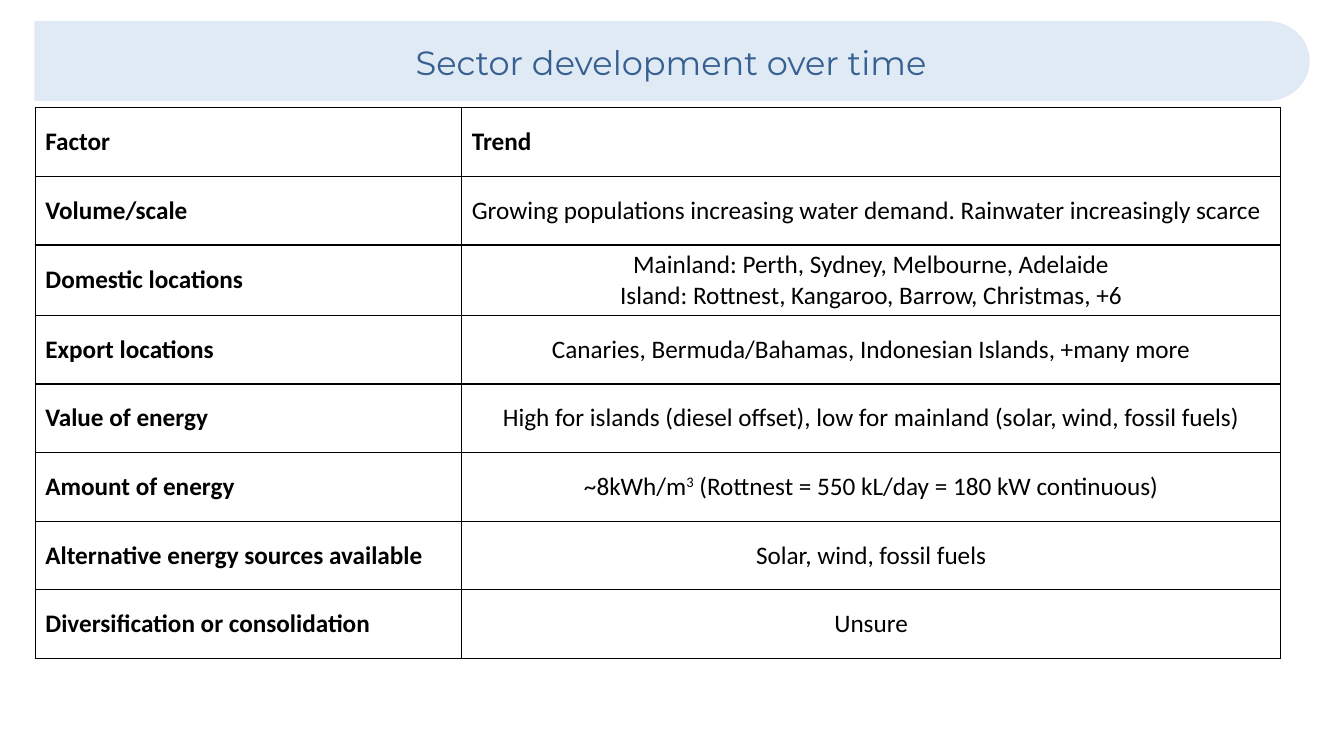
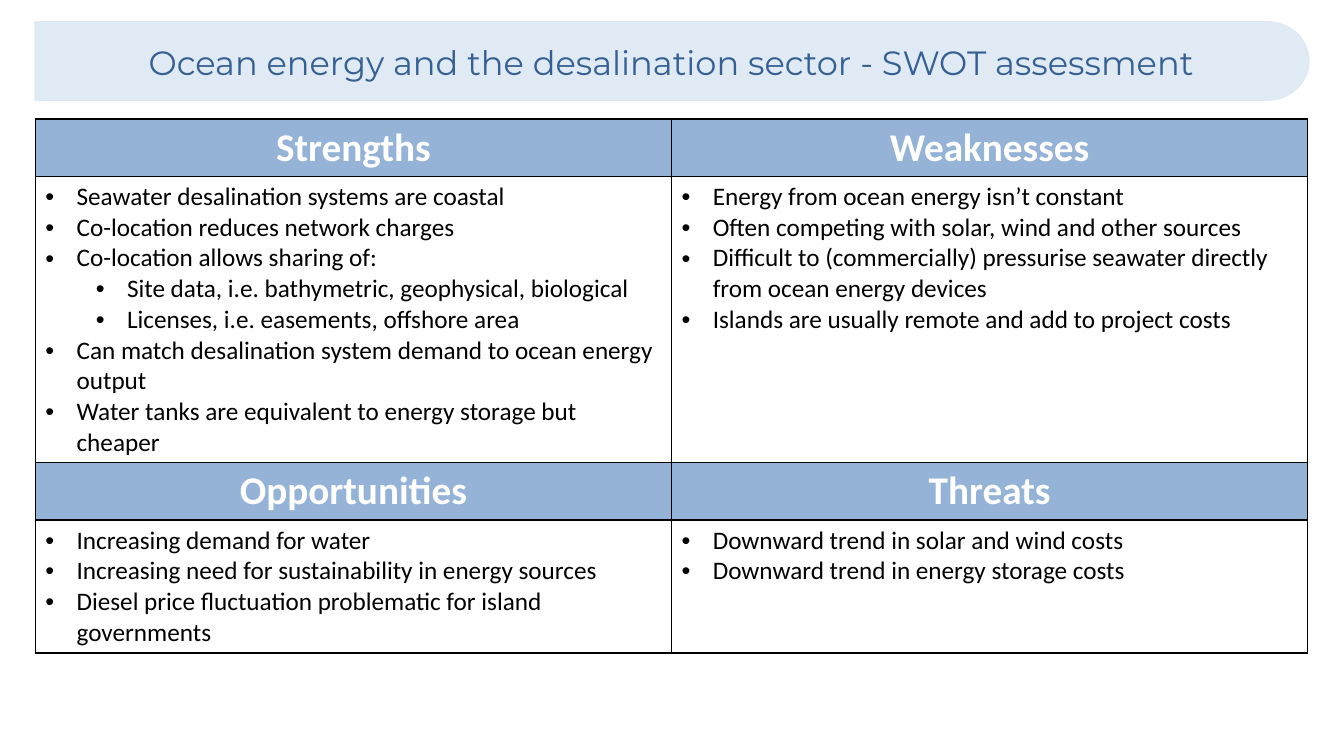
import math

import pptx
import pptx.dml.color
import pptx.enum.text
import pptx.oxml
import pptx.oxml.ns
import pptx.util
from pptx.util import Inches

HUE = {"band": "E0EAF4", "title": "376092", "head": "95B3D7",
       "ink": "000000", "page": "FFFFFF"}
ALIGN = pptx.enum.text.PP_ALIGN
ANCHOR = pptx.enum.text.MSO_ANCHOR
LEFT = 0.35


def color(name):
    return pptx.dml.color.RGBColor.from_string(HUE[name])


def write(para, text, size=18, font="Calibri", hue="ink", bold=False,
          align=ALIGN.LEFT, level=None):
    """Fill a paragraph; ^marks^ enclose superscript, a level gives a bullet."""
    if level is not None:
        props = para._p.get_or_add_pPr()
        props.set("marL", str(Inches(0.31 + 0.5 * level)))
        props.set("indent", str(Inches(-0.31)))
        mark = pptx.oxml.ns.nsdecls("a")
        for xml in (f'<a:buFont {mark} typeface="Arial"/>',
                    f'<a:buChar {mark} char="•"/>'):
            props.append(pptx.oxml.parse_xml(xml))
        para.level = level
    para.alignment = align
    for index, part in enumerate(text.split("^")):
        run = para.add_run()
        run.text = part
        run.font.size = pptx.util.Pt(size)
        run.font.name = font
        run.font.bold = bold
        run.font.color.rgb = color(hue)
        if index % 2:
            run._r.get_or_add_rPr().set("baseline", "30000")


class Deck:
    def __init__(self):
        self.file = pptx.Presentation()
        self.file.slide_width = Inches(13.33)
        self.file.slide_height = Inches(7.5)
        self.slide = None

    def page(self, title):
        """Start a slide with its band and title."""
        self.slide = self.file.slides.add_slide(self.file.slide_layouts[6])
        self.slide.background.fill.solid()
        self.slide.background.fill.fore_color.rgb = color("page")
        self.band()
        self.title(title)

    def band(self):
        left, top, high, hub, wide = 0.34, 0.21, 0.79, 12.57, 0.42
        mid = top + high / 2
        turns = [math.radians(step) for step in range(-90, 91, 5)]
        arc = [(hub + wide * math.cos(turn), mid + high / 2 * math.sin(turn))
               for turn in turns]
        pen = self.slide.shapes.build_freeform(
            Inches(left), Inches(top), scale=1.0)
        pen.add_line_segments(
            [(Inches(x), Inches(y)) for x, y in arc + [(left, top + high)]])
        shape = pen.convert_to_shape()
        shape.shadow.inherit = False
        shape.fill.solid()
        shape.fill.fore_color.rgb = color("band")
        shape.line.fill.background()

    def title(self, text):
        box = self.slide.shapes.add_textbox(
            Inches(LEFT), Inches(0.35), Inches(12.61), Inches(0.54))
        frame = box.text_frame
        frame.word_wrap = True
        frame.vertical_anchor = ANCHOR.MIDDLE
        write(frame.paragraphs[0], text, size=24, font="Montserrat",
              hue="title", align=ALIGN.CENTER)

    def table(self, top, cols, rows):
        """Add an empty table from its column widths and row heights."""
        grid = self.slide.shapes.add_table(
            len(rows), len(cols), Inches(LEFT), Inches(top),
            Inches(sum(cols)), Inches(sum(rows))).table
        grid.first_row = grid.horz_banding = False
        for col, width in zip(grid.columns, cols):
            col.width = Inches(width)
        for row, height in zip(grid.rows, rows):
            row.height = Inches(height)
        return grid

    def cell(self, cell, lines, fill=None, anchor=ANCHOR.TOP, **style):
        """Border, fill and write one cell; each line is (text, level)."""
        props = cell._tc.get_or_add_tcPr()
        for side in "LRTB":
            props.append(pptx.oxml.parse_xml(
                f'<a:ln{side} {pptx.oxml.ns.nsdecls("a")} w="12700">'
                f'<a:solidFill><a:srgbClr val="{HUE["ink"]}"/></a:solidFill>'
                f'</a:ln{side}>'))
        if fill:
            cell.fill.solid()
            cell.fill.fore_color.rgb = color(fill)
        else:
            cell.fill.background()
        cell.vertical_anchor = anchor
        frame = cell.text_frame
        for index, (text, level) in enumerate(lines):
            para = frame.add_paragraph() if index else frame.paragraphs[0]
            write(para, text, level=level, **style)


TRENDS = [
    ("Factor", ["Trend"]),
    ("Volume/scale", ["Growing populations increasing water demand. "
                      "Rainwater increasingly scarce"]),
    ("Domestic locations", ["Mainland: Perth, Sydney, Melbourne, Adelaide",
                            "Island: Rottnest, Kangaroo, Barrow, Christmas, +6"]),
    ("Export locations",
     ["Canaries, Bermuda/Bahamas, Indonesian Islands, +many more"]),
    ("Value of energy", ["High for islands (diesel offset), "
                         "low for mainland (solar, wind, fossil fuels)"]),
    ("Amount of energy",
     ["~8kWh/m^3^ (Rottnest = 550 kL/day = 180 kW continuous)"]),
    ("Alternative energy sources available", ["Solar, wind, fossil fuels"]),
    ("Diversification or consolidation", ["Unsure"]),
]

# Heading and bullets (text, level) of each quadrant, row by row
SWOT = [
    ("Strengths", [
        ("Seawater desalination systems are coastal", 0),
        ("Co-location reduces network charges", 0),
        ("Co-location allows sharing of:", 0),
        ("Site data, i.e. bathymetric, geophysical, biological", 1),
        ("Licenses, i.e. easements, offshore area", 1),
        ("Can match desalination system demand to ocean energy output", 0),
        ("Water tanks are equivalent to energy storage but cheaper", 0)]),
    ("Weaknesses", [
        ("Energy from ocean energy isn’t constant", 0),
        ("Often competing with solar, wind and other sources", 0),
        ("Difficult to (commercially) pressurise seawater directly "
         "from ocean energy devices", 0),
        ("Islands are usually remote and add to project costs", 0)]),
    ("Opportunities", [
        ("Increasing demand for water", 0),
        ("Increasing need for sustainability in energy sources", 0),
        ("Diesel price fluctuation problematic for island governments", 0)]),
    ("Threats", [
        ("Downward trend in solar and wind costs", 0),
        ("Downward trend in energy storage costs", 0)]),
]


def trends(deck):
    deck.page("Sector development over time")
    grid = deck.table(1.07, [4.23, 8.12], [0.68] * len(TRENDS))
    for row, (factor, lines) in enumerate(TRENDS):
        deck.cell(grid.cell(row, 0), [(factor, None)],
                  anchor=ANCHOR.MIDDLE, bold=True)
        deck.cell(grid.cell(row, 1), [(line, None) for line in lines],
                  anchor=ANCHOR.MIDDLE, bold=row == 0,
                  align=ALIGN.LEFT if row < 2 else ALIGN.CENTER)


def swot(deck):
    deck.page("Ocean energy and the desalination sector - SWOT assessment")
    grid = deck.table(1.18, [6.31, 6.31], [0.57, 2.84, 0.57, 1.32])
    for index, (head, points) in enumerate(SWOT):
        pair, col = divmod(index, 2)
        deck.cell(grid.cell(2 * pair, col), [(head, None)], fill="head",
                  size=28, hue="page", bold=True, align=ALIGN.CENTER)
        deck.cell(grid.cell(2 * pair + 1, col), points)


def main():
    deck = Deck()
    trends(deck)
    swot(deck)
    deck.file.save("out.pptx")


if __name__ == "__main__":
    main()
